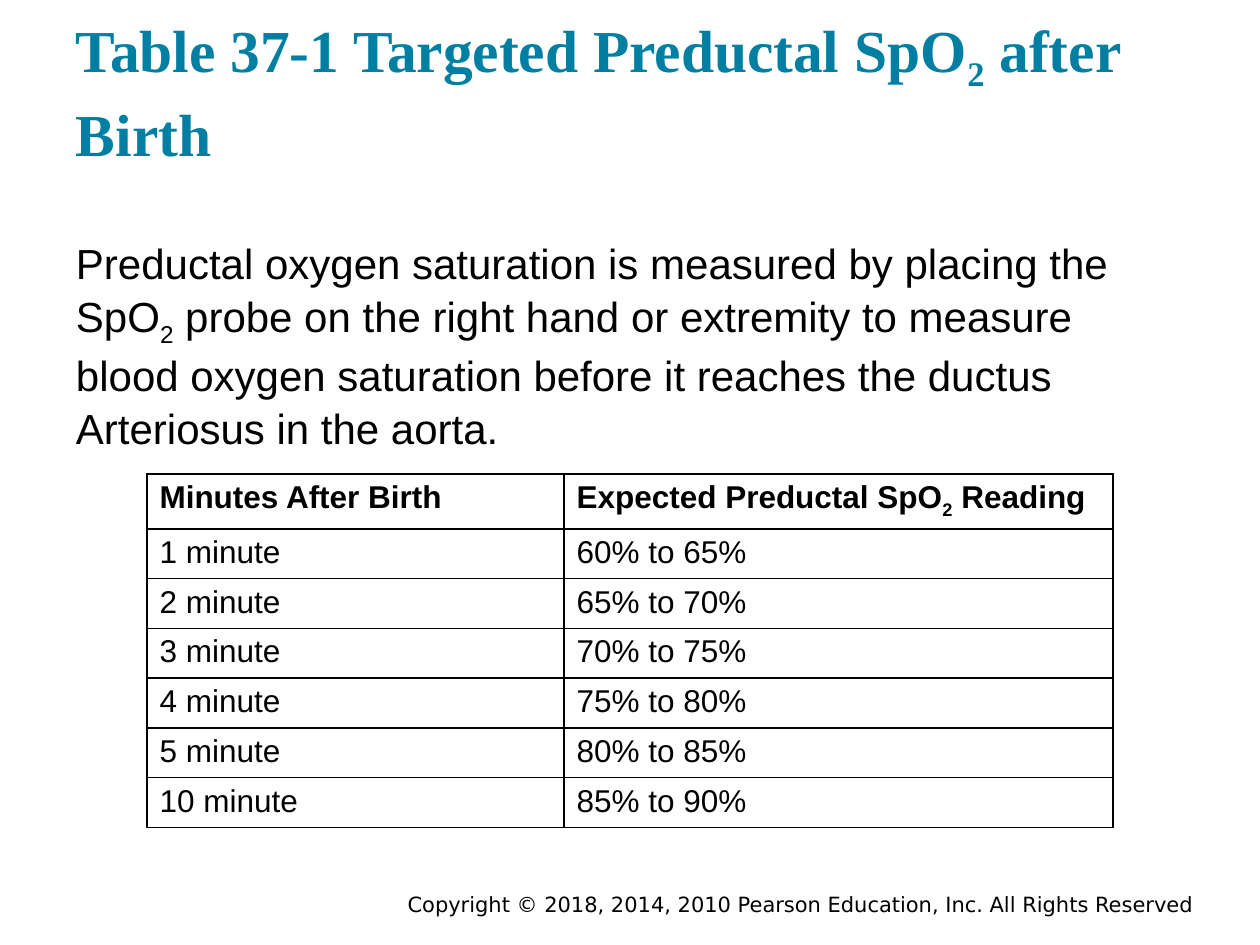
from lxml.etree import SubElement
from pptx import Presentation
from pptx.dml.color import RGBColor
from pptx.enum.text import MSO_ANCHOR as Anchor, PP_ALIGN as Align
from pptx.oxml.ns import qn
from pptx.util import Emu, Pt

SCALE = 914400 / 126
BLACK, WHITE, TEAL = "000000", "FFFFFF", "007FA3"
READINGS = [
    ("Minutes After Birth", "Expected Preductal SpO|2| Reading"),
    ("1 minute", "60% to 65%"),
    ("2 minute", "65% to 70%"),
    ("3 minute", "70% to 75%"),
    ("4 minute", "75% to 80%"),
    ("5 minute", "80% to 85%"),
    ("10 minute", "85% to 90%"),
]


def px(length):
    return Emu(round(length * SCALE))


def color(value):
    return RGBColor.from_string(value)


class SlideBuilder:
    """Hold the style and the current slide, and add each kind of element."""

    styles = {
        "title": {"name": "Times New Roman", "size": Pt(34), "bold": True},
        "body": {"name": "Arial", "size": Pt(24)},
        "header": {"name": "Arial", "size": Pt(18), "bold": True},
        "cell": {"name": "Arial", "size": Pt(18), "bold": False},
        "footer": {"name": "DejaVu Sans", "size": Pt(12)},
    }

    def __init__(self, presentation):
        self.slide = presentation.slides.add_slide(presentation.slide_layouts[6])

    def add_runs(self, paragraph, text, style, fill=BLACK):
        for index, part in enumerate(text.split("|")):
            run = paragraph.add_run()
            run.text = part
            for attribute, value in self.styles[style].items():
                setattr(run.font, attribute, value)
            run.font.color.rgb = color(fill)
            if index % 2:
                run.font._element.set("baseline", "-25000")

    def text(self, box, text, style, fill=BLACK, anchor=Anchor.TOP, **layout):
        shape = self.slide.shapes.add_textbox(*map(px, box))
        frame = shape.text_frame
        settings = {"word_wrap": True, "vertical_anchor": anchor}
        settings.update({f"margin_{side}": px(13) for side in ("left", "top", "right", "bottom")})
        for attribute, value in settings.items():
            setattr(frame, attribute, value)
        paragraph = frame.paragraphs[0]
        for attribute, value in layout.items():
            setattr(paragraph, attribute, value)
        self.add_runs(paragraph, text, style, fill)

    def border(self, cell):
        properties = cell._tc.get_or_add_tcPr()
        for side in ("a:lnL", "a:lnR", "a:lnT", "a:lnB"):
            line = SubElement(properties, qn(side), w=str(Pt(1)))
            solid = SubElement(line, qn("a:solidFill"))
            SubElement(solid, qn("a:srgbClr"), val=BLACK)

    def table(self, left, top, widths, heights, rows):
        box = map(px, (left, top, sum(widths), sum(heights)))
        table = self.slide.shapes.add_table(len(rows), len(widths), *box).table
        table.horz_banding = False
        for column, width in zip(table.columns, widths):
            column.width = px(width)
        for row_index, (row, height, texts) in enumerate(zip(table.rows, heights, rows)):
            row.height = px(height)
            style = "cell" if row_index else "header"
            for cell, text in zip(row.cells, texts):
                cell.margin_top = cell.margin_bottom = px(6)
                self.border(cell)
                cell.fill.solid()
                cell.fill.fore_color.rgb = color(WHITE)
                self.add_runs(cell.text_frame.paragraphs[0], text, style)


def main():
    presentation = Presentation()
    presentation.slide_width, presentation.slide_height = px(1260), px(945)
    builder = SlideBuilder(presentation)
    builder.text((368, 888, 839, 32), "Copyright © 2018, 2014, 2010 Pearson Education, Inc. All Rights Reserved",
                 "footer", anchor=Anchor.MIDDLE, alignment=Align.RIGHT)
    builder.text((63, 30, 1134, 151), "Table 37-1 Targeted Preductal SpO|2| after Birth",
                 "title", TEAL, anchor=Anchor.BOTTOM, line_spacing=1.04)
    builder.text((63, 223, 1089, 215),
                 "Preductal oxygen saturation is measured by placing the SpO|2| probe on the right hand or "
                 "extremity to measure blood oxygen saturation before it reaches the ductus Arteriosus in the aorta.",
                 "body", line_spacing=1.04)
    builder.table(147, 474, (417, 549), [53] + [48] * 6, READINGS)
    presentation.save("out.pptx")


if __name__ == "__main__":
    main()
